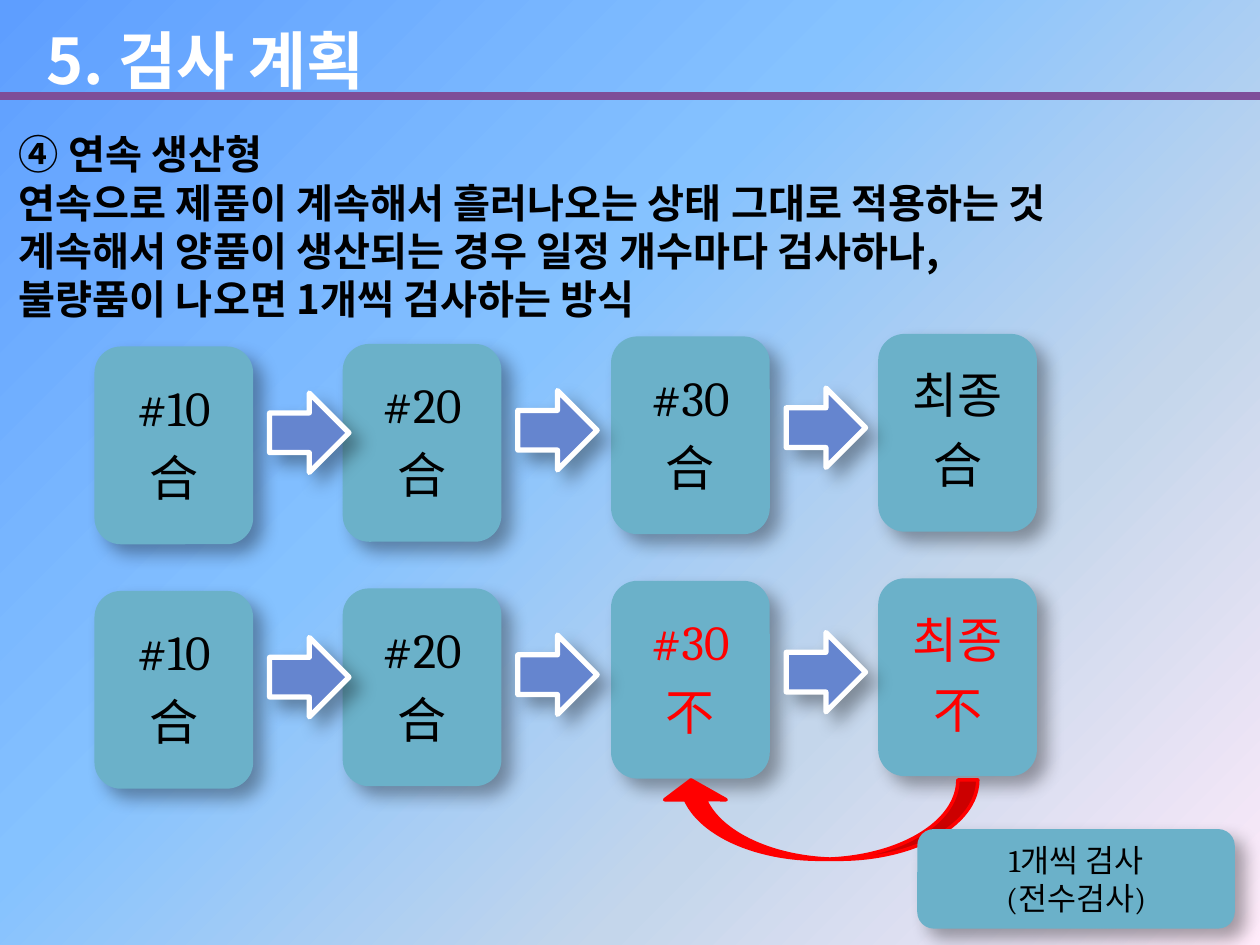
from dataclasses import dataclass

from lxml.etree import SubElement
from pptx import Presentation
from pptx.dml.color import RGBColor
from pptx.enum.shapes import MSO_CONNECTOR as Connector, MSO_SHAPE as Shape
from pptx.enum.text import MSO_ANCHOR as Anchor, PP_ALIGN as Align
from pptx.oxml.ns import qn
from pptx.util import Inches, Pt


@dataclass(frozen=True)
class Theme:
    gradient: tuple = ((0, "5E9EFF"), (40, "85C2FF"), (70, "C4D6EB"), (100, "FFEBFA"))
    white: str = "FFFFFF"
    ink: str = "000000"
    alert: str = "FF0000"
    rule: str = "7E4E99"
    card: str = "6BB1C9"
    arrow: str = "6585CF"
    sans: str = "Noto Sans CJK KR"
    serif: str = "Cambria"
    title_size: int = 36
    body_size: int = 23
    card_size: int = 28
    note_size: int = 18


THEME = Theme()

TITLE = "5. 검사 계획"
BODY = [
    "④ 연속 생산형",
    "연속으로 제품이 계속해서 흘러나오는 상태 그대로 적용하는 것",
    "계속해서 양품이 생산되는 경우 일정 개수마다 검사하나,",
    "불량품이 나오면 1개씩 검사하는 방식",
]
STAGES = ["#10", "#20", "#30", "최종"]
PASS, FAIL = "合", "不"
RUNS = [[PASS, PASS, PASS, PASS], [PASS, PASS, FAIL, FAIL]]
NOTE = ["1개씩 검사", "(전수검사)"]

# Each stage's left edge, and its drop below the top of its row
COLUMNS = [(0.75, 0.10), (2.72, 0.08), (4.85, 0.02), (6.97, 0)]
ROW_TOP, ROW_PITCH = 2.65, 1.94
CARD_W, CARD_H = 1.26, 1.57
ARROW, ARROW_GAP, ARROW_DROP, ARROW_RISE = 0.63, 0.13, 0.47, 0.02


def rgb(value):
    return RGBColor.from_string(value)


def add_color(parent, value, alpha=None):
    color = SubElement(parent, qn("a:srgbClr"), val=value)
    if alpha is not None:
        SubElement(color, qn("a:alpha"), val=str(alpha * 1000))


def paint_background(slide):
    slide.background.fill.gradient()
    gradient = slide.element.find(".//" + qn("a:gradFill"))
    for child in list(gradient):
        gradient.remove(child)
    stops = SubElement(gradient, qn("a:gsLst"))
    for position, color in THEME.gradient:
        add_color(SubElement(stops, qn("a:gs"), pos=str(position * 1000)), color)
    SubElement(gradient, qn("a:lin"), ang=str(45 * 60000), scaled="0")


def write(shape, lines, *, size, color, font, bold=False, align=Align.LEFT,
          anchor=Anchor.TOP, inset=None, hanging=0, line=None, after=None, wrap=True):
    """Fill a shape with one paragraph per line; after is a percentage of the line."""
    frame = shape.text_frame
    frame.word_wrap, frame.vertical_anchor = wrap, anchor
    if inset is not None:
        frame.margin_left = frame.margin_right = Inches(inset)
        frame.margin_top = frame.margin_bottom = Inches(inset)
    frame.text = "\n".join(lines)
    for paragraph in frame.paragraphs:
        paragraph.alignment = align
        if line:
            paragraph.line_spacing = line
        properties = paragraph._p.get_or_add_pPr()
        if hanging:
            properties.set("marL", str(Inches(hanging)))
            properties.set("indent", str(-Inches(hanging)))
        if after:
            spacing = SubElement(properties, qn("a:spcAft"))
            SubElement(spacing, qn("a:spcPct"), val=str(after * 1000))
        for run in paragraph.runs:
            run.font.size, run.font.bold, run.font.name = Pt(size), bold, font
            run.font.color.rgb = rgb(color)
            SubElement(run.font._element, qn("a:ea"), typeface=THEME.sans)


def add_text(slide, box, lines, **style):
    write(slide.shapes.add_textbox(*map(Inches, box)), lines, **style)


def add_block(slide, kind, box, fill, outline=None, width=0, shadow=True):
    block = slide.shapes.add_shape(kind, *map(Inches, box))
    block.shadow.inherit = False
    block.fill.solid()
    block.fill.fore_color.rgb = rgb(fill)
    if outline:
        block.line.color.rgb, block.line.width = rgb(outline), Pt(width)
    else:
        block.line.fill.background()
    if shadow:
        effects = block._element.spPr.find(qn("a:effectLst"))
        outer = SubElement(effects, qn("a:outerShdw"), blurRad=str(Pt(10.2)),
                           dist=str(Pt(8)), dir=str(45 * 60000), rotWithShape="0")
        add_color(outer, THEME.ink, alpha=35)
    return block


def add_header(slide, slide_width):
    add_text(slide, (0.27, 0.12, 3.07, 0.71), [TITLE], size=THEME.title_size,
             color=THEME.white, font=THEME.sans, bold=True, wrap=False)
    rule_y = Inches(0.76)
    rule = slide.shapes.add_connector(Connector.STRAIGHT, 0, rule_y, slide_width, rule_y)
    rule.line.color.rgb, rule.line.width = rgb(THEME.rule), Pt(4.5)
    SubElement(rule._element.spPr, qn("a:effectLst"))


def add_run(slide, top, verdicts):
    for (left, drop), stage, verdict in zip(COLUMNS, STAGES, verdicts):
        card = add_block(slide, Shape.ROUNDED_RECTANGLE,
                         (left, top + drop, CARD_W, CARD_H), THEME.card)
        write(card, [stage, verdict], size=THEME.card_size, font=THEME.serif,
              color=THEME.alert if verdict == FAIL else THEME.ink,
              align=Align.CENTER, anchor=Anchor.MIDDLE, inset=0.12, line=0.9, after=35)
    for step, (left, _) in enumerate(COLUMNS[:-1]):
        box = (left + CARD_W + ARROW_GAP, top + ARROW_DROP - step * ARROW_RISE, ARROW, ARROW)
        add_block(slide, Shape.RIGHT_ARROW, box, THEME.arrow, THEME.white, 3)


def add_return_loop(slide):
    loop = add_block(slide, Shape.CURVED_UP_ARROW, (5.24, 6.19, 2.52, 0.63),
                     THEME.alert, THEME.alert, 2, shadow=False)
    for index, value in enumerate((0.25, 0.775, 0.25)):
        loop.adjustments[index] = value
    loop._element.spPr.find(qn("a:xfrm")).set("flipH", "1")
    note = add_block(slide, Shape.ROUNDED_RECTANGLE, (7.28, 6.58, 2.52, 0.79), THEME.card)
    write(note, NOTE, size=THEME.note_size, color=THEME.ink, font=THEME.serif,
          align=Align.CENTER, anchor=Anchor.MIDDLE)


def main():
    deck = Presentation()
    deck.slide_width, deck.slide_height = Inches(10), Inches(7.5)
    slide = deck.slides.add_slide(deck.slide_layouts[6])
    paint_background(slide)
    add_header(slide, deck.slide_width)
    add_text(slide, (0.05, 0.98, 9.77, 1.65), BODY, size=THEME.body_size,
             color=THEME.ink, font=THEME.sans, bold=True, hanging=0.25)
    for row, verdicts in enumerate(RUNS):
        add_run(slide, ROW_TOP + row * ROW_PITCH, verdicts)
    add_return_loop(slide)
    deck.save("out.pptx")


if __name__ == "__main__":
    main()
